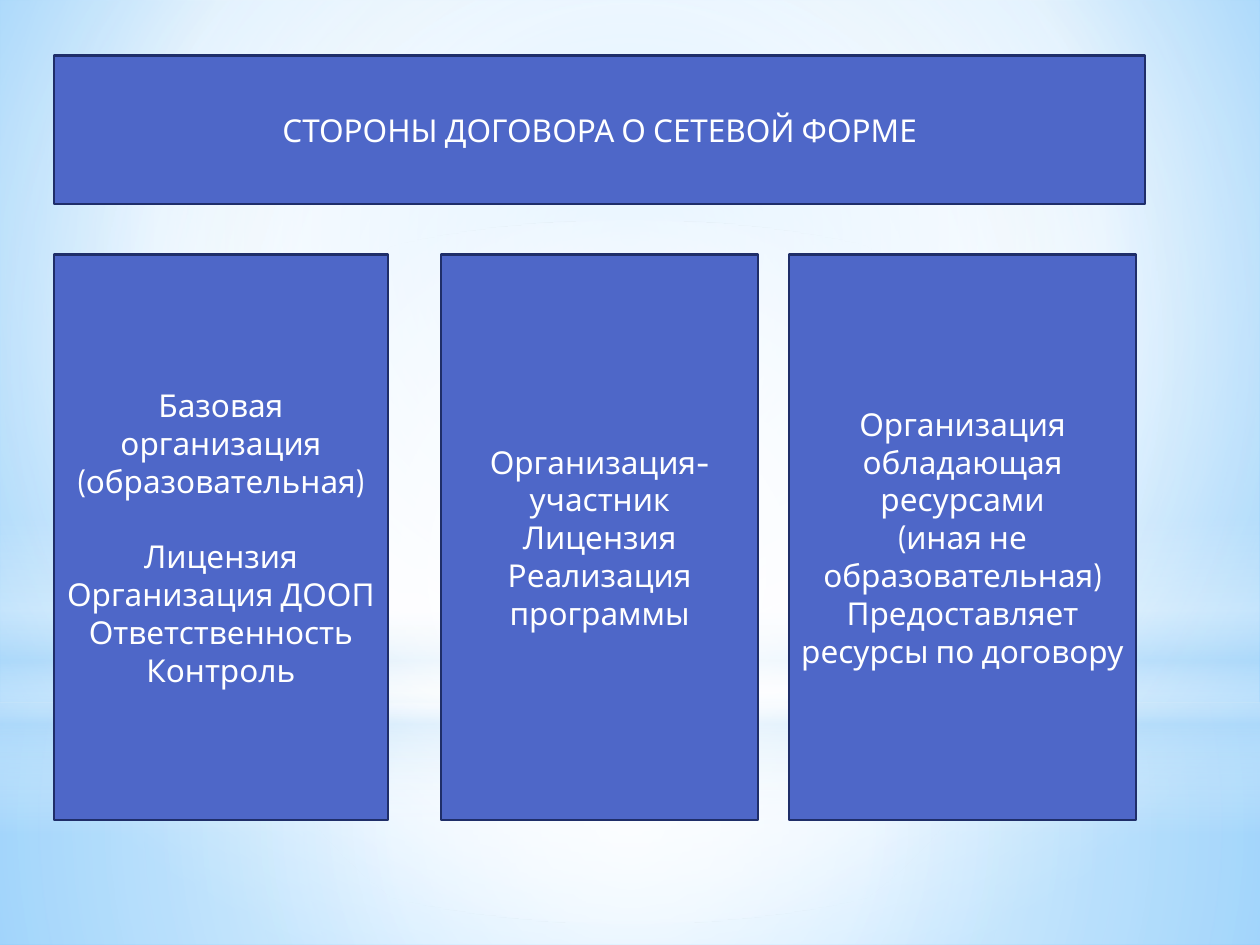
from typing import NamedTuple, Optional

from lxml.etree import SubElement
from pptx import Presentation
from pptx.dml.color import RGBColor
from pptx.enum.shapes import MSO_SHAPE as Shape
from pptx.enum.text import MSO_ANCHOR as Anchor, PP_ALIGN as Align
from pptx.oxml.ns import qn
from pptx.util import Cm, Pt

WIDTH, HEIGHT = 25.4, 19.05
WHITE, SKY, BLUE, NAVY = "FFFFFF", "B4DCFA", "4E67C8", "1F2E69"
FONT = {"name": "Cabin", "size": Pt(18)}
FRAME = {"word_wrap": True, "vertical_anchor": Anchor.MIDDLE}
GROUP_GAP = Pt(21.6)
LEFT, COLUMN_TOP, COLUMN_HEIGHT = 1.09, 5.13, 11.4
CENTER = (50, 50, 50, 50)


class Stop(NamedTuple):
    pos: int
    color: str
    opacity: int = 100


class Gradient(NamedTuple):
    """A circular gradient around focus (left, top, right, bottom %), else a vertical one."""
    stops: tuple[Stop, ...]
    focus: Optional[tuple[int, int, int, int]] = CENTER


class Glow(NamedTuple):
    top: float
    height: float
    gradient: Gradient
    shape: Shape = Shape.RECTANGLE


class Box(NamedTuple):
    left: float
    top: float
    width: float
    height: float
    groups: tuple[tuple[str, ...], ...]


BACKGROUND = Gradient((Stop(0, "9ED5FF"), Stop(60, WHITE), Stop(100, "5BB9FF")),
                      (20, 10, 20, 60))
GLOWS = [
    Glow(14.17, 4.88, Gradient((Stop(0, WHITE, 91), Stop(37, WHITE, 76), Stop(100, SKY, 79)))),
    Glow(0, 14.17, Gradient((Stop(0, WHITE, 89), Stop(48, WHITE, 62), Stop(100, SKY, 79)))),
    Glow(10.46, 6.35, Gradient((Stop(0, WHITE, 0), Stop(29, WHITE, 30), Stop(45, SKY, 40),
                                Stop(55, WHITE, 26), Stop(65, SKY, 60), Stop(100, WHITE, 0)),
                               None)),
    Glow(4.45, 14.17, Gradient((Stop(0, WHITE), Stop(56, WHITE, 0))), Shape.OVAL),
]
BOXES = [
    Box(LEFT, 1.12, 22, 3, (("СТОРОНЫ ДОГОВОРА О СЕТЕВОЙ ФОРМЕ",),)),
    Box(LEFT, COLUMN_TOP, 6.73, COLUMN_HEIGHT,
        (("Базовая организация", "(образовательная)"),
         ("Лицензия", "Организация ДООП", "Ответственность", "Контроль"))),
    Box(8.89, COLUMN_TOP, 6.4, COLUMN_HEIGHT,
        (("Организация-участник", "Лицензия", "Реализация программы"),)),
    Box(15.9, COLUMN_TOP, 7.01, COLUMN_HEIGHT,
        (("Организация обладающая ресурсами", "(иная не образовательная)",
          "Предоставляет ресурсы по договору"),)),
]


def rgb(color: str) -> RGBColor:
    return RGBColor.from_string(color)


def set_gradient(fill, owner, gradient: Gradient) -> None:
    """Give fill, whose XML lies in owner, the stops and direction of gradient."""
    fill.gradient()
    grad = owner.find(".//" + qn("a:gradFill"))
    for child in list(grad):
        grad.remove(child)
    stops = SubElement(grad, qn("a:gsLst"))
    for stop in gradient.stops:
        gs = SubElement(stops, qn("a:gs"), pos=str(stop.pos * 1000))
        color = SubElement(gs, qn("a:srgbClr"), val=stop.color)
        if stop.opacity < 100:
            SubElement(color, qn("a:alpha"), val=str(stop.opacity * 1000))
    if gradient.focus is None:
        SubElement(grad, qn("a:lin"), ang="5400000", scaled="0")
    else:
        circle = SubElement(grad, qn("a:path"), path="circle")
        sides = {side: str(v * 1000) for side, v in zip("ltrb", gradient.focus)}
        SubElement(circle, qn("a:fillToRect"), **sides)


def draw_glow(s, glow: Glow) -> None:
    sp = s.shapes.add_shape(glow.shape, 0, Cm(glow.top), Cm(WIDTH), Cm(glow.height))
    sp.shadow.inherit = False
    sp.line.fill.background()
    set_gradient(sp.fill, sp._element.spPr, glow.gradient)


def draw_box(s, box: Box) -> None:
    sp = s.shapes.add_shape(Shape.RECTANGLE, *map(Cm, box[:4]))
    sp.shadow.inherit = False
    sp.fill.solid()
    sp.fill.fore_color.rgb = rgb(BLUE)
    sp.line.color.rgb = rgb(NAVY)
    sp.line.width = Pt(1.25)
    tf = sp.text_frame
    for name, value in FRAME.items():
        setattr(tf, name, value)
    lines = [(text, g > 0 and i == 0)
             for g, group in enumerate(box.groups) for i, text in enumerate(group)]
    for n, (text, starts_group) in enumerate(lines):
        p = tf.add_paragraph() if n else tf.paragraphs[0]
        p.alignment = Align.CENTER
        if starts_group:
            p.space_before = GROUP_GAP
        r = p.add_run()
        r.text = text
        for name, value in FONT.items():
            setattr(r.font, name, value)
        r.font.color.rgb = rgb(WHITE)


def main() -> None:
    prs = Presentation()
    prs.slide_width, prs.slide_height = Cm(WIDTH), Cm(HEIGHT)
    s = prs.slides.add_slide(prs.slide_layouts[6])
    set_gradient(s.background.fill, s._element, BACKGROUND)
    for glow in GLOWS:
        draw_glow(s, glow)
    for box in BOXES:
        draw_box(s, box)
    prs.save("out.pptx")


if __name__ == "__main__":
    main()
